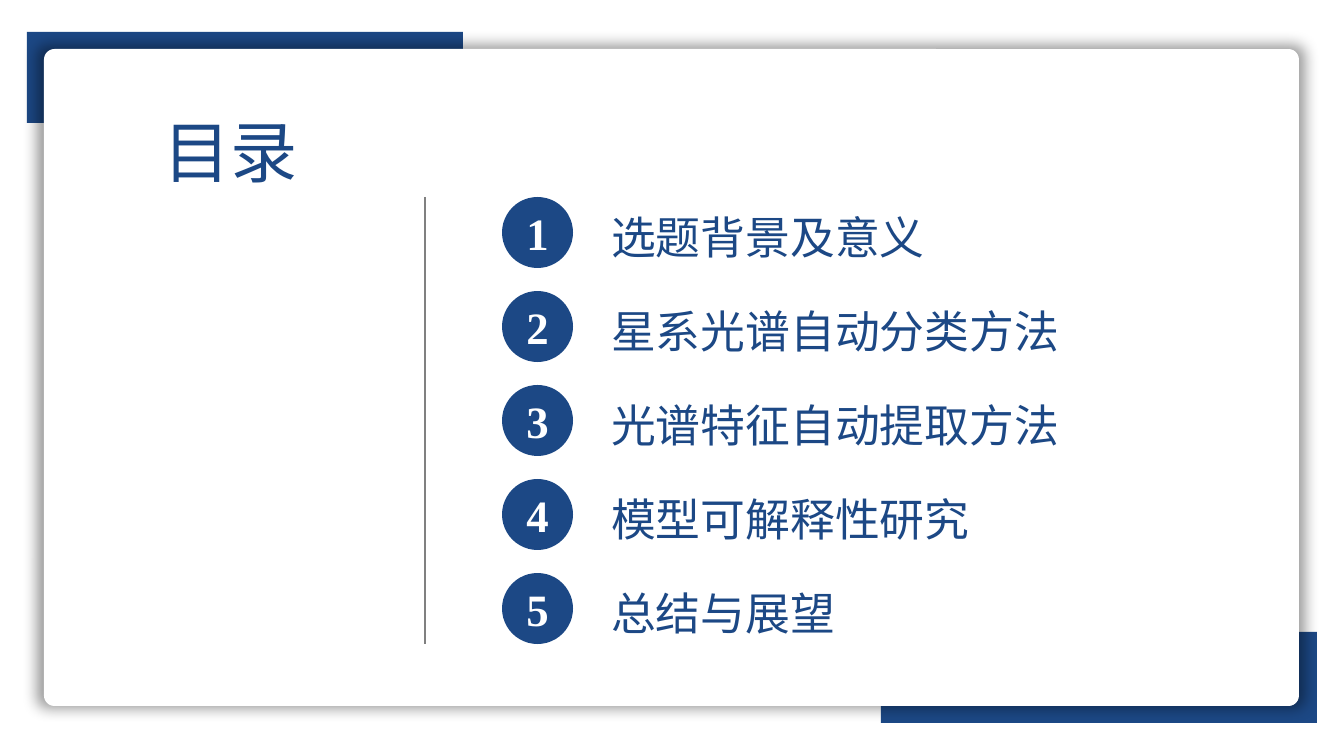
from dataclasses import dataclass

from lxml import etree
from pptx import Presentation
from pptx import util as u
from pptx.dml.color import RGBColor
from pptx.enum import shapes, text
from pptx.oxml.ns import qn

EMU_PER_PX = 914400 / 100.8


@dataclass(frozen=True)
class Theme:
    navy: RGBColor = RGBColor(0x1C, 0x48, 0x85)
    white: RGBColor = RGBColor(0xFF, 0xFF, 0xFF)
    grey: RGBColor = RGBColor(0x80, 0x80, 0x80)
    heading_pt: int = 48
    item_pt: int = 32
    rule_pt: int = 2
    cjk_font: str = "Noto Sans CJK SC"
    number_font: str = "Times New Roman"


THEME = Theme()
CHAPTERS = ["选题背景及意义", "星系光谱自动分类方法", "光谱特征自动提取方法",
            "模型可解释性研究", "总结与展望"]
FIRST_BADGE_TOP, BADGE_SIZE, ROW_PITCH = 197, 71, 94


def px(length):
    return u.Emu(round(length * EMU_PER_PX))


def set_all(target, values):
    for name, value in values.items():
        setattr(target, name, value)


def place(holder, left, top, width, height):
    set_all(holder, {"left": px(left), "top": px(top),
                     "width": px(width), "height": px(height)})


def style_run(run, face, size, color, bold=False):
    set_all(run.font, {"name": face, "size": u.Pt(size), "bold": bold})
    run.font.color.rgb = color
    east_asian = etree.SubElement(run.font._element, qn("a:ea"))
    east_asian.set("typeface", face)


def add_panel(slide, preset, box, color):
    panel = slide.shapes.add_shape(preset, *map(px, box))
    panel.shadow.inherit = False
    panel.fill.solid()
    panel.fill.fore_color.rgb = color
    panel.line.fill.background()
    return panel


def add_glow_shadow(panel):
    effects = panel._element.spPr.find(qn("a:effectLst"))
    shadow = etree.SubElement(
        effects, qn("a:outerShdw"), blurRad=str(px(15)), dist="0",
        sx="101000", sy="101000", algn="ctr", rotWithShape="0")
    black = etree.SubElement(shadow, qn("a:srgbClr"), val="000000")
    etree.SubElement(black, qn("a:alpha"), val="40000")


def add_frame(slide):
    rect = shapes.MSO_SHAPE.RECTANGLE
    for corner in [(881, 632, 436, 91), (27, 32, 436, 91)]:
        add_panel(slide, rect, corner, THEME.navy)
    card = add_panel(slide, shapes.MSO_SHAPE.ROUNDED_RECTANGLE,
                     (44, 49, 1255, 657), THEME.white)
    card.adjustments[0] = 0.016
    add_glow_shadow(card)


def add_badge(slide, number):
    top = FIRST_BADGE_TOP + (number - 1) * ROW_PITCH
    badge = add_panel(slide, shapes.MSO_SHAPE.OVAL,
                      (502, top, BADGE_SIZE, BADGE_SIZE), THEME.navy)
    set_all(badge.text_frame, {
        "margin_left": 0, "margin_right": 0, "word_wrap": False,
        "vertical_anchor": text.MSO_ANCHOR.MIDDLE})
    line = badge.text_frame.paragraphs[0]
    line.alignment = text.PP_ALIGN.CENTER
    digit = line.add_run()
    digit.text = str(number)
    style_run(digit, THEME.number_font, THEME.item_pt, THEME.white, True)


def add_rule(slide):
    rule = slide.shapes.add_connector(
        shapes.MSO_CONNECTOR.STRAIGHT, px(425), px(197), px(425), px(644))
    rule.line.color.rgb = THEME.grey
    rule.line.width = u.Pt(THEME.rule_pt)
    etree.SubElement(rule._element.spPr, qn("a:effectLst"))


def fill_heading(heading):
    place(heading, 153, 105, 256, 92)
    set_all(heading.text_frame, {
        "word_wrap": True, "auto_size": text.MSO_AUTO_SIZE.NONE,
        "vertical_anchor": text.MSO_ANCHOR.MIDDLE})
    line = heading.text_frame.paragraphs[0]
    line.alignment = text.PP_ALIGN.JUSTIFY
    words = line.add_run()
    words.text = "目录"
    style_run(words, THEME.cjk_font, THEME.heading_pt, THEME.navy)


def fill_chapters(chapters):
    # One exact line per badge row keeps the list level with the numbers
    place(chapters, 601, 170, 580, len(CHAPTERS) * ROW_PITCH)
    frame = chapters.text_frame
    set_all(frame, {
        "margin_top": 0, "margin_bottom": 0, "word_wrap": True,
        "auto_size": text.MSO_AUTO_SIZE.NONE,
        "vertical_anchor": text.MSO_ANCHOR.TOP})
    for index, chapter in enumerate(CHAPTERS):
        line = frame.add_paragraph() if index else frame.paragraphs[0]
        props = line._p.get_or_add_pPr()
        set_all(line, {
            "alignment": text.PP_ALIGN.JUSTIFY, "space_before": u.Pt(0),
            "line_spacing": u.Pt(round(px(ROW_PITCH).pt))})
        props.set("marL", "0")
        props.set("indent", "0")
        etree.SubElement(props, qn("a:buNone"))
        words = line.add_run()
        words.text = chapter
        style_run(words, THEME.cjk_font, THEME.item_pt, THEME.navy)


def main():
    deck = Presentation()
    set_all(deck, {"slide_width": px(1344), "slide_height": px(756)})
    slide = deck.slides.add_slide(deck.slide_layouts[1])
    heading, chapters = slide.placeholders

    # Background frame, with the placeholders raised above it
    add_frame(slide)
    for holder in (heading, chapters):
        slide.shapes._spTree.append(holder._element)

    # Heading, numbered chapters and divider
    fill_heading(heading)
    fill_chapters(chapters)
    for number in range(1, len(CHAPTERS) + 1):
        add_badge(slide, number)
    add_rule(slide)

    deck.save("out.pptx")


if __name__ == "__main__":
    main()
